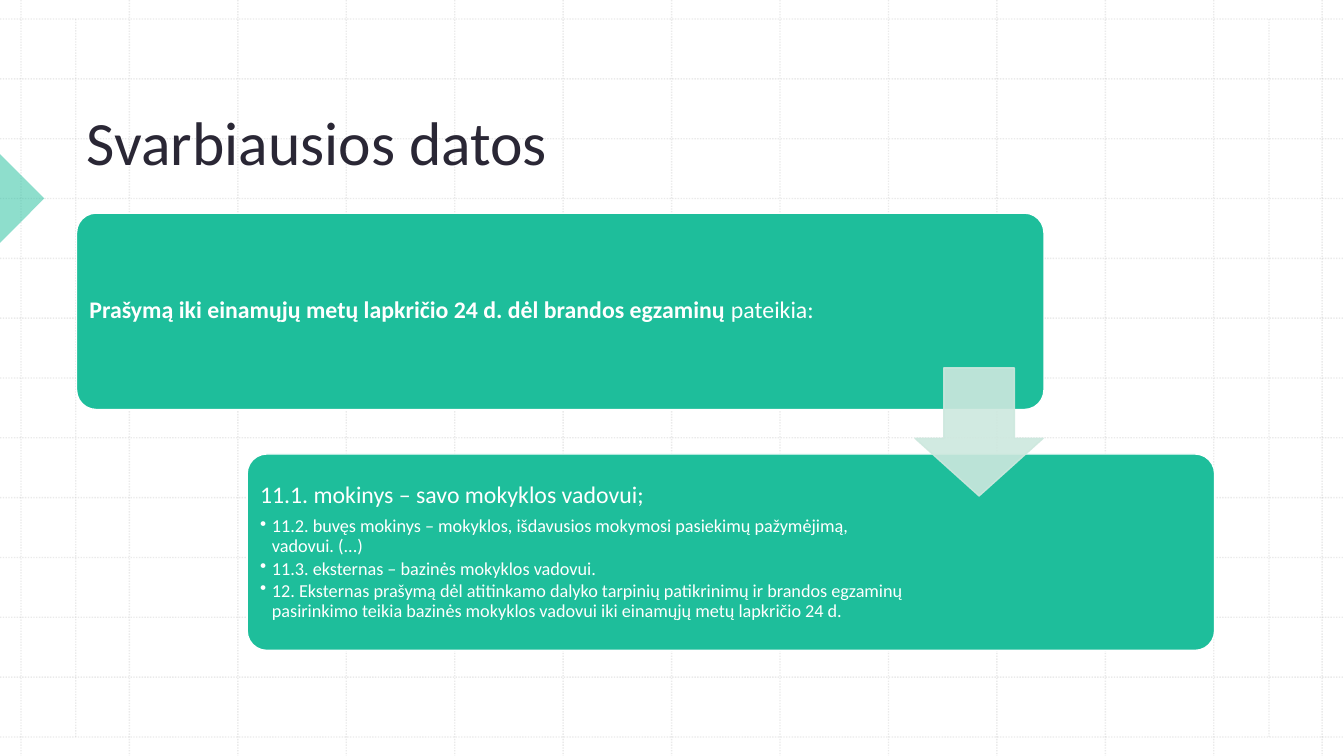
from lxml import etree
from pptx import Presentation
from pptx.dml.color import RGBColor
from pptx.enum.dml import MSO_LINE
from pptx.enum.shapes import MSO_CONNECTOR, MSO_SHAPE
from pptx.enum.text import MSO_ANCHOR, PP_ALIGN
from pptx.oxml.ns import qn
from pptx.util import Cm, Pt

STRAIGHT = MSO_CONNECTOR.STRAIGHT
DOTTED = MSO_LINE.ROUND_DOT
ROUNDED, DOWN_ARROW, TRIANGLE = (
    MSO_SHAPE.ROUNDED_RECTANGLE, MSO_SHAPE.DOWN_ARROW, MSO_SHAPE.RIGHT_TRIANGLE)
MIDDLE, BOTTOM = MSO_ANCHOR.MIDDLE, MSO_ANCHOR.BOTTOM
LEFT = PP_ALIGN.LEFT

FONT = "Calibri"
COLORS = {"green": "1EBE9B", "mint": "CDE8DE", "grid": "BCBCBC",
          "dark": "2A2735", "white": "FFFFFF"}
WIDTH, HEIGHT = 33.87, 19.05
CARD_WIDTH, CARD_HEIGHT = 24.38, 4.95

REQUEST = [("Prašymą iki einamųjų metų lapkričio 24 d. dėl brandos egzaminų ", True),
           ("pateikia:", False)]
STUDENT = [("11.1. mokinys – savo mokyklos vadovui;", False)]
OTHERS = [
    "11.2. buvęs mokinys – mokyklos, išdavusios mokymosi pasiekimų pažymėjimą, vadovui. (...)",
    "11.3. eksternas – bazinės mokyklos vadovui.",
    "12. Eksternas prašymą dėl atitinkamo dalyko tarpinių patikrinimų ir brandos egzaminų "
    "pasirinkimo teikia bazinės mokyklos vadovui iki einamųjų metų lapkričio 24 d.",
]


def color(name):
    return RGBColor.from_string(COLORS[name])


def set_opacity(shape, percent):
    for fill in shape.element.spPr.iter(qn("a:solidFill")):
        etree.SubElement(fill[0], qn("a:alpha"), val=str(percent * 1000))


def style_run(run, size, color_name, bold=False):
    run.font.name = FONT
    run.font.size = Pt(size)
    run.font.bold = bold
    run.font.color.rgb = color(color_name)


def add_filled(slide, preset, box, fill):
    shape = slide.shapes.add_shape(preset, *map(Cm, box))
    shape.shadow.inherit = False
    shape.fill.solid()
    shape.fill.fore_color.rgb = color(fill)
    return shape


def outline(shape, color_name):
    shape.line.color.rgb = color(color_name)
    shape.line.width = Pt(1)


def add_grid_line(slide, x1, y1, x2, y2):
    line = slide.shapes.add_connector(STRAIGHT, Cm(x1), Cm(y1), Cm(x2), Cm(y2))
    outline(line, "grid")
    line.line.dash_style = DOTTED
    set_opacity(line, 30)
    etree.SubElement(line.element.spPr, qn("a:effectLst"))


def add_grid(slide, left, top, right, bottom):
    intervals = 12
    for i in range(intervals + 1):
        x = left + i * (right - left) / intervals
        y = top + i * (bottom - top) / intervals
        add_grid_line(slide, x, 0, x, HEIGHT)
        add_grid_line(slide, 0, y, WIDTH, y)
    for x in (1.91, 31.98):
        add_grid_line(slide, x, top, x, bottom)


def add_edge_marker(slide, center_y, side):
    marker = add_filled(
        slide, TRIANGLE, (-side / 2, center_y - side / 2, side, side), "green")
    marker.rotation = 225
    marker.line.fill.background()
    set_opacity(marker, 50)


def add_title(slide, left, top, width, height):
    title = slide.shapes.title
    title.left, title.top, title.width, title.height = map(Cm, (left, top, width, height))
    title.text_frame.text = "Svarbiausios datos"
    title.text_frame.vertical_anchor = BOTTOM
    heading = title.text_frame.paragraphs[0]
    heading.alignment = LEFT
    style_run(heading.runs[0], 44, "dark")
    title.element.getparent().append(title.element)


def format_paragraph(paragraph, space_after):
    paragraph.alignment = LEFT
    paragraph.line_spacing = 0.9
    paragraph.space_after = Pt(space_after)


def add_bullet(frame, text):
    item = frame.add_paragraph()
    item.text = text
    item.level = 1
    format_paragraph(item, 2)
    style_run(item.runs[0], 13, "white")
    properties = item._p.get_or_add_pPr()
    properties.set("marL", str(Cm(0.3)))
    properties.set("indent", str(-Cm(0.3)))
    etree.SubElement(properties, qn("a:buChar"), char="•")


def add_card(slide, left, top, right_margin, lead, bullets=()):
    card = add_filled(slide, ROUNDED, (left, top, CARD_WIDTH, CARD_HEIGHT), "green")
    card.adjustments[0] = 0.1
    outline(card, "white")
    frame = card.text_frame
    frame.word_wrap = True
    frame.vertical_anchor = MIDDLE
    frame.margin_left = frame.margin_top = frame.margin_bottom = Cm(0.18)
    frame.margin_right = Cm(right_margin)
    opening = frame.paragraphs[0]
    format_paragraph(opening, 6)
    for text, bold in lead:
        run = opening.add_run()
        run.text = text
        style_run(run, 17, "white", bold)
    for text in bullets:
        add_bullet(frame, text)


def add_step_arrow(slide, left, top, side):
    arrow = add_filled(slide, DOWN_ARROW, (left, top, side, side), "mint")
    arrow.adjustments[0] = 0.55
    arrow.adjustments[1] = 0.45
    outline(arrow, "mint")
    set_opacity(arrow, 90)


def add_steps(slide, left, top):
    add_card(slide, left, top, 5, REQUEST)
    add_card(slide, left + 4.3, top + 6.07, 7.7, STUDENT, OTHERS)
    add_step_arrow(slide, left + 21.13, top + 3.9, 3.23)


def main():
    deck = Presentation()
    deck.slide_width, deck.slide_height = Cm(WIDTH), Cm(HEIGHT)
    slide = deck.slides.add_slide(deck.slide_layouts[5])
    add_grid(slide, 0.53, 0.48, 33.32, 18.57)
    add_edge_marker(slide, 5, 1.58)
    add_title(slide, 1.93, 2.01, 28.68, 2.59)
    add_steps(slide, 1.93, 5.37)
    deck.save("out.pptx")


if __name__ == "__main__":
    main()
